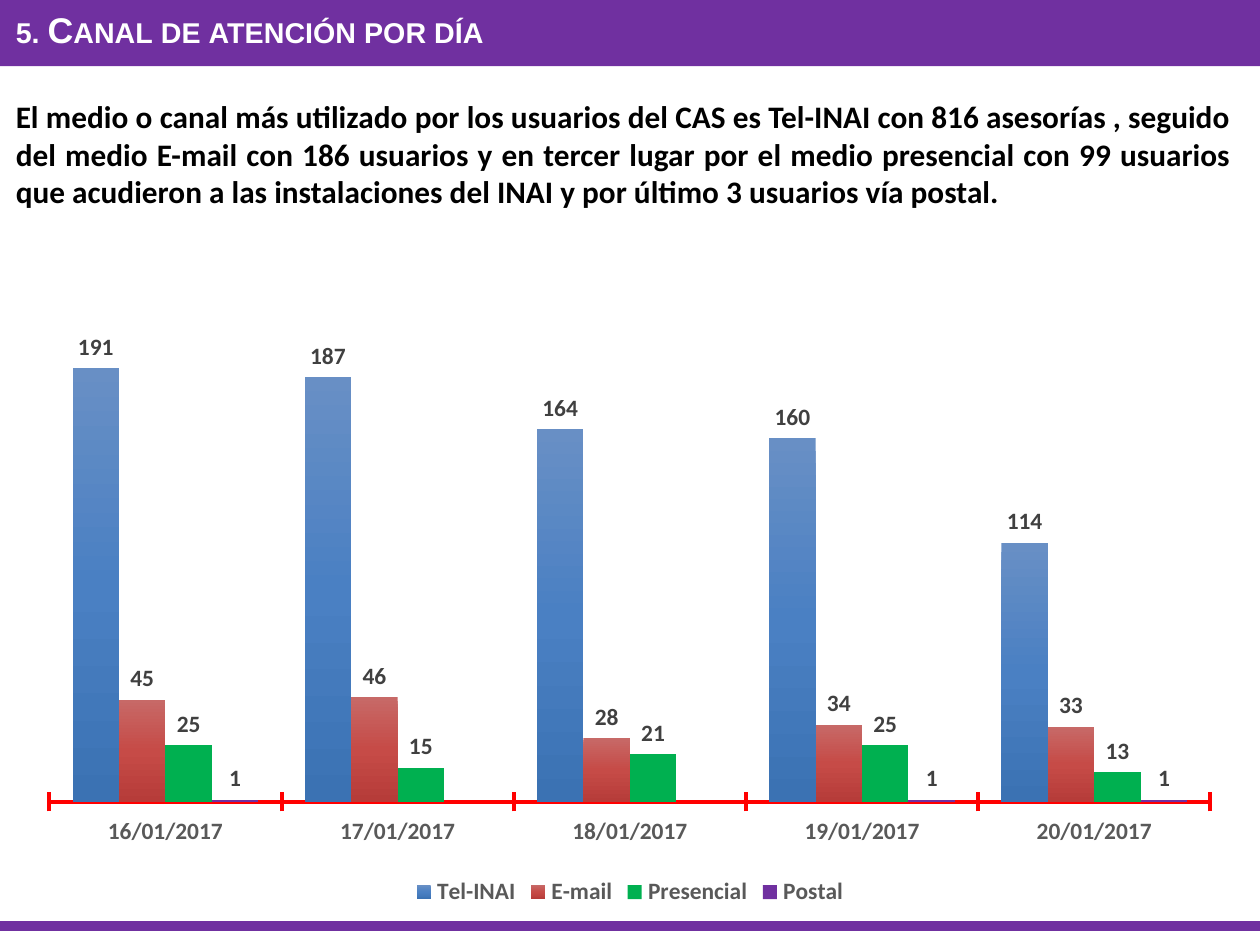
from copy import deepcopy

from lxml import etree
from pptx import Presentation
from pptx import util as u
from pptx.chart.data import CategoryChartData
from pptx.dml.color import RGBColor
from pptx.enum import chart as ch, shapes, text
from pptx.oxml import ns

PURPLE = RGBColor(0x70, 0x30, 0xA0)
GREEN = RGBColor(0x00, 0xB0, 0x50)
RED = RGBColor(0xFF, 0x00, 0x00)
WHITE = RGBColor(0xFF, 0xFF, 0xFF)
BLACK = RGBColor(0x00, 0x00, 0x00)
AXIS_GREY = RGBColor(0x59, 0x59, 0x59)
LABEL_GREY = RGBColor(0x40, 0x40, 0x40)
BLUES = [RGBColor(0x68, 0x8F, 0xC5), RGBColor(0x4A, 0x80, 0xC3), RGBColor(0x3B, 0x72, 0xB3)]
REDS = [RGBColor(0xC7, 0x69, 0x67), RGBColor(0xC6, 0x4B, 0x47), RGBColor(0xB6, 0x3C, 0x39)]

DAYS = [f"{day}/01/2017" for day in range(16, 21)]
CHANNELS = [
    ("Tel-INAI", [191, 187, 164, 160, 114], BLUES),
    ("E-mail", [45, 46, 28, 34, 33], REDS),
    ("Presencial", [25, 15, 21, 25, 13], [GREEN]),
    ("Postal", [1, None, None, 1, 1], [PURPLE]),
]
SUMMARY = (
    "El medio o canal más utilizado por los usuarios del CAS es Tel-INAI con 816 asesorías , "
    "seguido del medio E-mail con 186 usuarios y en tercer lugar por el medio presencial con "
    "99 usuarios que acudieron a las instalaciones del INAI y por último 3 usuarios vía postal."
)


def style_font(font, size, color, name="Calibri"):
    font.size, font.bold, font.name = u.Pt(size), True, name
    font.color.rgb = color


def write(frame, words, size, color, name="Calibri", align=None, small_caps=False, shadow=False):
    frame.word_wrap = True
    paragraph = frame.paragraphs[0]
    paragraph.alignment = align
    run = paragraph.add_run()
    run.text = words
    style_font(run.font, size, color, name)
    properties = run._r.get_or_add_rPr()
    if small_caps:
        properties.set("cap", "small")
    if shadow:
        effects = etree.Element(ns.qn("a:effectLst"))
        outer = etree.SubElement(effects, ns.qn("a:outerShdw"),
                                 blurRad="38100", dist="38100", dir="2700000", algn="tl")
        etree.SubElement(outer, ns.qn("a:srgbClr"), val="000000")
        properties.find(ns.qn("a:solidFill")).addnext(effects)


class ReportSlide:
    chart_size = 10.5

    def __init__(self, presentation):
        self.width, self.height = presentation.slide_width, presentation.slide_height
        self.slide = presentation.slides.add_slide(presentation.slide_layouts[6])

    def place(self, left, top, width, height):
        return [round(share * side) for share, side in zip(
            (left, top, width, height), (self.width, self.height) * 2)]

    def band(self, *box):
        shape = self.slide.shapes.add_shape(shapes.MSO_SHAPE.RECTANGLE, *self.place(*box))
        shape.shadow.inherit = False
        shape.fill.solid()
        shape.fill.fore_color.rgb = PURPLE
        shape.line.fill.background()

    def rule(self, top, weight):
        line = self.slide.shapes.add_connector(
            shapes.MSO_CONNECTOR.STRAIGHT, *self.place(0, top, 1, top))
        line.line.color.rgb = PURPLE
        line.line.width = u.Pt(weight)
        etree.SubElement(line._element.spPr, ns.qn("a:effectLst"))

    def label(self, words, *box, **style):
        shape = self.slide.shapes.add_textbox(*self.place(*box))
        write(shape.text_frame, words, **style)

    def paint(self, series, colors):
        fill = series.format.fill
        if len(colors) == 1:
            fill.solid()
            fill.fore_color.rgb = colors[0]
            return
        fill.gradient()
        fill.gradient_angle = 270
        stops = series._element.find(".//" + ns.qn("a:gsLst"))
        stops.insert(1, deepcopy(stops[0]))
        for index, (stop, color) in enumerate(zip(fill.gradient_stops, colors)):
            stop.color.rgb = color
            stop.position = index / (len(colors) - 1)

    def column_chart(self, categories, channels, *box):
        data = CategoryChartData()
        data.categories = categories
        for name, values, _ in channels:
            data.add_series(name, values)
        chart = self.slide.shapes.add_chart(
            ch.XL_CHART_TYPE.COLUMN_CLUSTERED, *self.place(*box), data).chart
        style_font(chart.font, self.chart_size, BLACK)
        chart.has_title = False
        chart.has_legend = True
        chart.legend.position = ch.XL_LEGEND_POSITION.BOTTOM
        chart.legend.include_in_layout = False
        style_font(chart.legend.font, self.chart_size, AXIS_GREY)

        days = chart.category_axis
        days.major_tick_mark = ch.XL_TICK_MARK.CROSS
        days.format.line.color.rgb = RED
        days.format.line.width = u.Pt(1.75)
        style_font(days.tick_labels.font, self.chart_size, AXIS_GREY)
        counts = chart.value_axis
        counts.minimum_scale, counts.maximum_scale = 0, 250
        counts.has_major_gridlines = False
        counts.visible = False

        plot = chart.plots[0]
        plot.gap_width, plot.overlap = 100, 0
        plot.vary_by_categories = False
        for series, (_, _, colors) in zip(plot.series, channels):
            self.paint(series, colors)
            labels = series.data_labels
            labels.show_value = True
            labels.position = ch.XL_LABEL_POSITION.OUTSIDE_END
            style_font(labels.font, self.chart_size, LABEL_GREY)
        self.fix_plot_area(chart, x=0.02, y=0.02, w=0.96, h=0.82)

    def fix_plot_area(self, chart, **shares):
        area = chart._chartSpace.find(".//" + ns.qn("c:plotArea"))
        for old in area.findall(ns.qn("c:layout")):
            area.remove(old)
        layout = etree.Element(ns.qn("c:layout"))
        area.insert(0, layout)
        manual = etree.SubElement(layout, ns.qn("c:manualLayout"))
        settings = {"layoutTarget": "inner", "xMode": "edge", "yMode": "edge", **shares}
        for tag, value in settings.items():
            etree.SubElement(manual, ns.qn("c:" + tag), val=str(value))


def main():
    presentation = Presentation()
    presentation.slide_width, presentation.slide_height = u.Inches(7.84), u.Inches(5.88)
    report = ReportSlide(presentation)
    report.rule(0.98, weight=4.5)
    report.band(0, 0, 1, 0.07)
    report.label("5. Canal de atención por día", 0, 0, 0.99, 0.06, size=16, color=WHITE,
                 name="Arial", small_caps=True, shadow=True)
    report.label(SUMMARY, 0, 0.095, 0.99, 0.14, size=14, color=BLACK,
                 align=text.PP_ALIGN.JUSTIFY)
    report.column_chart(DAYS, CHANNELS, 0.02, 0.233, 0.96, 0.733)
    presentation.save("out.pptx")


if __name__ == "__main__":
    main()
